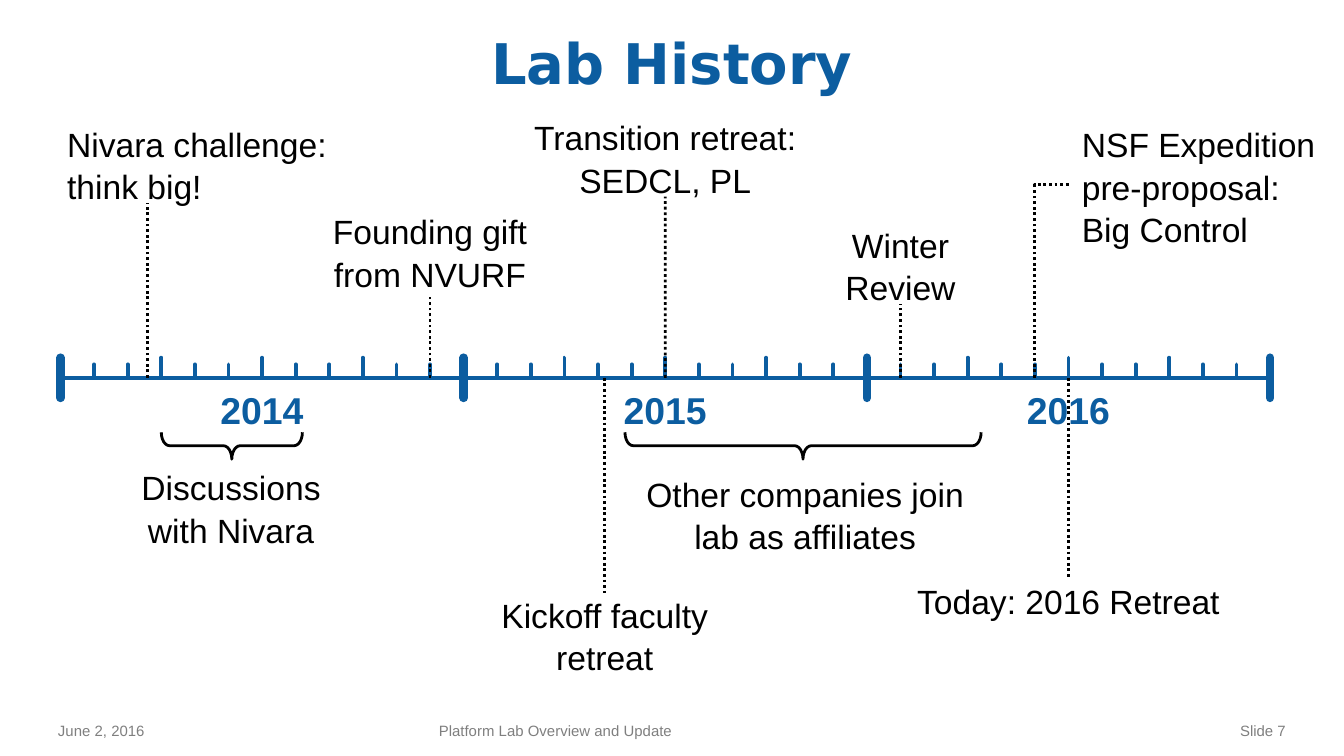
from lxml import etree
from pptx import Presentation
from pptx.dml.color import RGBColor
from pptx.enum import dml, shapes, text
from pptx.oxml.ns import qn
from pptx.util import Pt

BLUE, BLACK, GREY = "0C5DA0", "000000", "7F7F7F"
LEFT, CENTER, RIGHT = text.PP_ALIGN.LEFT, text.PP_ALIGN.CENTER, text.PP_ALIGN.RIGHT
TOP_SIDE, BOTTOM_SIDE = 0, 2

# Content: each label is a list of paragraphs, a newline is a line break
TITLE = "Lab History"
YEARS = ["2014", "2015", "2016"]
FOOTERS = [  # text, left, width, alignment
    ("June 2, 2016", 24, 180, LEFT),
    ("Platform Lab Overview and Update", 228, 270, LEFT),
    ("Slide 7", 516, 180, RIGHT),
]
EVENTS = [  # paragraphs, box, alignment, month on the axis, leader end, joined side
    (["Nivara challenge:\nthink big!"], (36, 65.2, 155, 43.6), LEFT, 2.6, 108.8, None),
    (["Founding gift\nfrom NVURF"], (176.4, 112.2, 108, 43.6), CENTER, 11, 159, None),
    (["Kickoff faculty\nretreat"], (266.4, 317.6, 115.2, 43.6), CENTER, 16.2, 317.6, TOP_SIDE),
    (["Transition retreat:", "SEDCL, PL"], (283.8, 61.8, 145.2, 43.6), CENTER, 18, 105.4,
     BOTTOM_SIDE),
    (["Winter\nReview"], (450, 119.2, 64.8, 43.6), CENTER, 25, 162.8, BOTTOM_SIDE),
    (["Today: 2016 Retreat"], (482.4, 310.4, 180, 21.8), CENTER, 30, 310.4, TOP_SIDE),
]
PERIODS = [  # paragraphs, box, first and last month of the brace
    (["Discussions", "with Nivara"], (72, 249.2, 103.6, 43.6), 3, 7.2),
    (["Other companies join\nlab as affiliates"], (345.6, 252.6, 171.4, 43.6), 16.8, 27.4),
]
PROPOSAL = ["NSF Expedition\npre-proposal:\nBig Control"]
PROPOSAL_BOX = (579.6, 65.5, 129.6, 65.5)
PROPOSAL_MONTH, PROPOSAL_TURN, PROPOSAL_END = 29, 98.8, 573.6

# Timeline geometry
AXIS_LEFT, AXIS_Y, MONTH = 32.4, 202.4, 18
BRACE_Y, BRACE_DEPTH = 231.6, 14.4


def color(value):
    return RGBColor.from_string(value)


def month_x(month):
    return AXIS_LEFT + month * MONTH


def style_line(line, value, width, dotted=False, rounded=False):
    line.color.rgb = color(value)
    line.width = Pt(width)
    if dotted:
        line.dash_style = dml.MSO_LINE.ROUND_DOT
    if rounded:
        line._get_or_add_ln().set("cap", "rnd")


def add_line(x1, y1, x2, y2, value, width, **style):
    connector = slide.shapes.add_connector(
        shapes.MSO_CONNECTOR.STRAIGHT, Pt(x1), Pt(y1), Pt(x2), Pt(y2))
    style_line(connector.line, value, width, **style)
    etree.SubElement(connector._element.spPr, qn("a:effectLst"))
    return connector


def write(frame, paragraphs, font, size, value, align, bold=False, spacing=None):
    for index, content in enumerate(paragraphs):
        paragraph = frame.paragraphs[0] if index == 0 else frame.add_paragraph()
        paragraph.alignment = align
        paragraph.line_spacing = spacing
        for number, line in enumerate(content.split("\n")):
            if number:
                paragraph.add_line_break()
            run = paragraph.add_run()
            run.text = line
            run.font.name, run.font.size, run.font.bold = font, Pt(size), bold
            run.font.color.rgb = color(value)


def add_label(paragraphs, box, align=CENTER, size=18, value=BLACK, bold=False):
    label = slide.shapes.add_textbox(*map(Pt, box))
    frame = label.text_frame
    frame.word_wrap = True
    frame.auto_size = text.MSO_AUTO_SIZE.SHAPE_TO_FIT_TEXT
    frame.margin_left = frame.margin_right = frame.margin_top = frame.margin_bottom = 0
    write(frame, paragraphs, "Arial", size, value, align, bold, spacing=1.05)
    return label


presentation = Presentation()
presentation.slide_width, presentation.slide_height = Pt(720), Pt(405)
slide = presentation.slides.add_slide(presentation.slide_layouts[5])

# Title
title = slide.shapes.title
title.left, title.top, title.width, title.height = Pt(24), Pt(11.5), Pt(672), Pt(43.2)
title.text_frame.vertical_anchor = text.MSO_ANCHOR.MIDDLE
write(title.text_frame, [TITLE], "DejaVu Sans", 30, BLUE, CENTER, bold=True)

# Footer
for content, left, width, align in FOOTERS:
    footer = slide.shapes.add_textbox(Pt(left), Pt(383), Pt(width), Pt(17.3))
    footer.text_frame.word_wrap = True
    footer.text_frame.vertical_anchor = text.MSO_ANCHOR.MIDDLE
    write(footer.text_frame, [content], "Arial", 8, GREY, align)

# Axis with year, quarter and month ticks
months = 12 * len(YEARS)
add_line(AXIS_LEFT, AXIS_Y, month_x(months), AXIS_Y, BLUE, 2)
for month in range(months + 1):
    x = month_x(month)
    if month % 12 == 0:
        add_line(x, AXIS_Y - 10.8, x, AXIS_Y + 10.8, BLUE, 4.5, rounded=True)
    else:
        height = 10.8 if month % 3 == 0 else 7.2
        add_line(x, AXIS_Y - height, x, AXIS_Y, BLUE, 2, rounded=True)
for index, year in enumerate(YEARS):
    add_label([year], (month_x(12 * index), 206, 12 * MONTH, 24.2), size=20, value=BLUE, bold=True)

# Events with dotted leaders
for paragraphs, box, align, month, end, side in EVENTS:
    label = add_label(paragraphs, box, align)
    x = month_x(month)
    leader = add_line(x, AXIS_Y, x, end, BLACK, 1.5, dotted=True)
    if side is not None:
        leader.end_connect(label, side)

# Periods under braces; each brace is a left brace turned to point down
for paragraphs, box, first, last in PERIODS:
    span = (last - first) * MONTH
    middle = month_x((first + last) / 2)
    brace = slide.shapes.add_shape(
        shapes.MSO_SHAPE.LEFT_BRACE, Pt(middle - BRACE_DEPTH / 2),
        Pt(BRACE_Y + BRACE_DEPTH / 2 - span / 2), Pt(BRACE_DEPTH), Pt(span))
    brace.rotation = 270
    brace.adjustments[0] = 0.31
    brace.shadow.inherit = False
    brace.fill.background()
    style_line(brace.line, BLACK, 1.5)
    add_label(paragraphs, box)

# Proposal with its bent leader
add_label(PROPOSAL, PROPOSAL_BOX, LEFT)
x = month_x(PROPOSAL_MONTH)
builder = slide.shapes.build_freeform(Pt(x), Pt(AXIS_Y))
builder.add_line_segments(
    [(Pt(x), Pt(PROPOSAL_TURN)), (Pt(PROPOSAL_END), Pt(PROPOSAL_TURN))], close=False)
bend = builder.convert_to_shape()
bend.shadow.inherit = False
bend.fill.background()
style_line(bend.line, BLACK, 1.5, dotted=True)

presentation.save("out.pptx")
